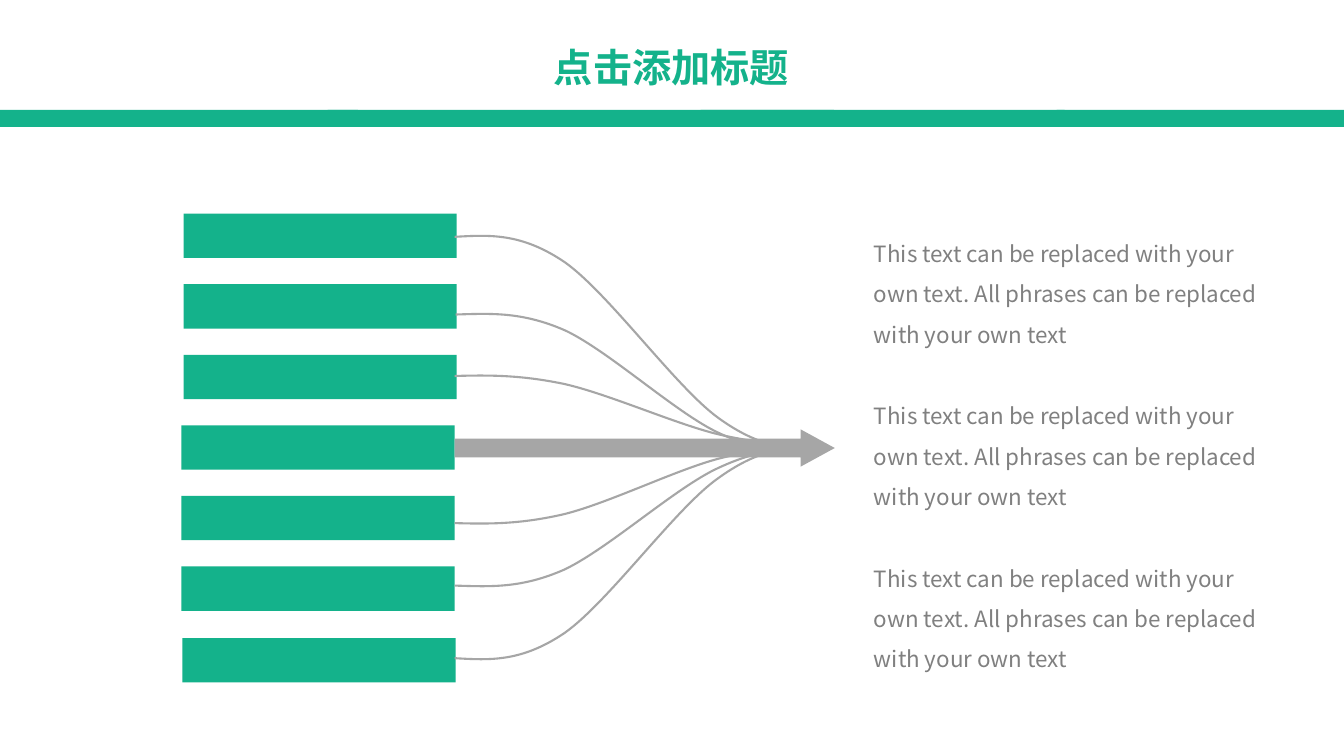
import pptx
import pptx.util
import pptx.dml.color
import pptx.enum.shapes
import pptx.enum.text
import pptx.oxml.ns
from lxml import etree

RGB = pptx.dml.color.RGBColor
GREEN = RGB(0x14, 0xB2, 0x8B)
SILVER = RGB(0xA6, 0xA6, 0xA6)
GRAY = RGB(0x80, 0x80, 0x80)
WHITE = RGB(0xFF, 0xFF, 0xFF)

PX = 9144  # one px is a hundredth of an inch
SHAPE = pptx.enum.shapes.MSO_SHAPE
ALIGN = pptx.enum.text.PP_ALIGN
FIT = pptx.enum.text.MSO_AUTO_SIZE
qn = pptx.oxml.ns.qn

TITLE = "点击添加标题"
NOTE = ("This text can be replaced with your own text. "
        "All phrases can be replaced with your own text")

# Shared S-curve: x offsets in px, y as a share of the drop
STEPS = [(35, -0.01), (66, -0.02), (109, 0.12), (153, 0.27), (220, 0.72),
         (262, 0.86), (305, 1.01), (335, 1.01), (364, 1)]


def block(slide, kind, box, fill):
    shape = slide.shapes.add_shape(kind, *(v * PX for v in box))
    shape.shadow.inherit = False
    shape.fill.solid()
    shape.fill.fore_color.rgb = fill
    shape.line.fill.background()
    return shape


def write(slide, box, text, *, size, font, color, bold=False,
          align=ALIGN.LEFT, lead=None, fit=FIT.NONE):
    frame = slide.shapes.add_textbox(*(v * PX for v in box)).text_frame
    frame.word_wrap = True
    frame.auto_size = fit
    para = frame.paragraphs[0]
    para.alignment = align
    para.line_spacing = lead
    run = para.add_run()
    run.text = text
    run.font.size = pptx.util.Pt(size)
    run.font.name = font
    run.font.bold = bold
    run.font.color.rgb = color
    # East Asian glyphs take the same font
    props = run.font._element
    etree.SubElement(props, qn("a:ea")).set("typeface", font)


def curve(slide, left, top, drop):
    pen = slide.shapes.build_freeform(left, top, scale=PX)
    pen.add_line_segments(
        [(left + x, round(top + drop * y)) for x, y in STEPS], close=False)
    shape = pen.convert_to_shape()
    shape.shadow.inherit = False
    shape.fill.background()
    shape.line.color.rgb = SILVER
    shape.line.width = pptx.util.Pt(1.5)
    # Every three points make one Bezier segment
    lines = list(shape._element.iter(qn("a:lnTo")))
    route = lines[0].getparent()
    for i in range(0, len(lines), 3):
        bend = etree.SubElement(route, qn("a:cubicBezTo"))
        for line in lines[i:i + 3]:
            bend.append(line[0])
            route.remove(line)


def header(slide, box):
    left, top, width, height = box
    # Band of overlapping strips
    for x, wide in ((-1, 356), (325, 502), (695, 361), (1048, 287)):
        block(slide, SHAPE.RECTANGLE,
              (left + x, top + height - 17, wide, 17), GREEN)
    write(slide, (left + 278, top + 38, 776, 87), TITLE, size=28, bold=True,
          font="Noto Sans CJK SC", color=GREEN, align=ALIGN.CENTER)


def funnel(slide, box):
    left, top, width, height = box
    # Seven bars
    for i, shift in enumerate((2, 2, 2, 0, 0, 0, 1)):
        block(slide, SHAPE.RECTANGLE,
              (left + shift, top + round(i * 70.1), 271, 44), GREEN)
    # Curves that meet at the arrow
    for x, start, end in ((271, 23, 232), (272, 100, 237), (271, 161, 228),
                          (271, 441, 233), (271, 369, 233), (271, 307, 233)):
        curve(slide, left + x, top + start, end - start)
    arrow = block(slide, SHAPE.RIGHT_ARROW,
                  (left + 271, top + 214, width - 271, 37), SILVER)
    arrow.adjustments[0] = 0.5
    arrow.adjustments[1] = 0.915


def notes(slide, box):
    left, top, width, height = box
    for i in range(3):
        write(slide, (left, top + i * 161, width, 131), NOTE, size=16,
              font="Noto Sans CJK JP", color=GRAY, lead=1.5,
              fit=FIT.SHAPE_TO_FIT_TEXT)


def main():
    deck = pptx.Presentation()
    deck.slide_width = 1333 * PX
    deck.slide_height = 750 * PX
    slide = deck.slides.add_slide(deck.slide_layouts[6])
    slide.background.fill.solid()
    slide.background.fill.fore_color.rgb = WHITE
    header(slide, (0, 0, 1333, 126))
    funnel(slide, (180, 212, 648, 465))
    notes(slide, (857, 220, 407, 453))
    deck.save("out.pptx")


if __name__ == "__main__":
    main()
